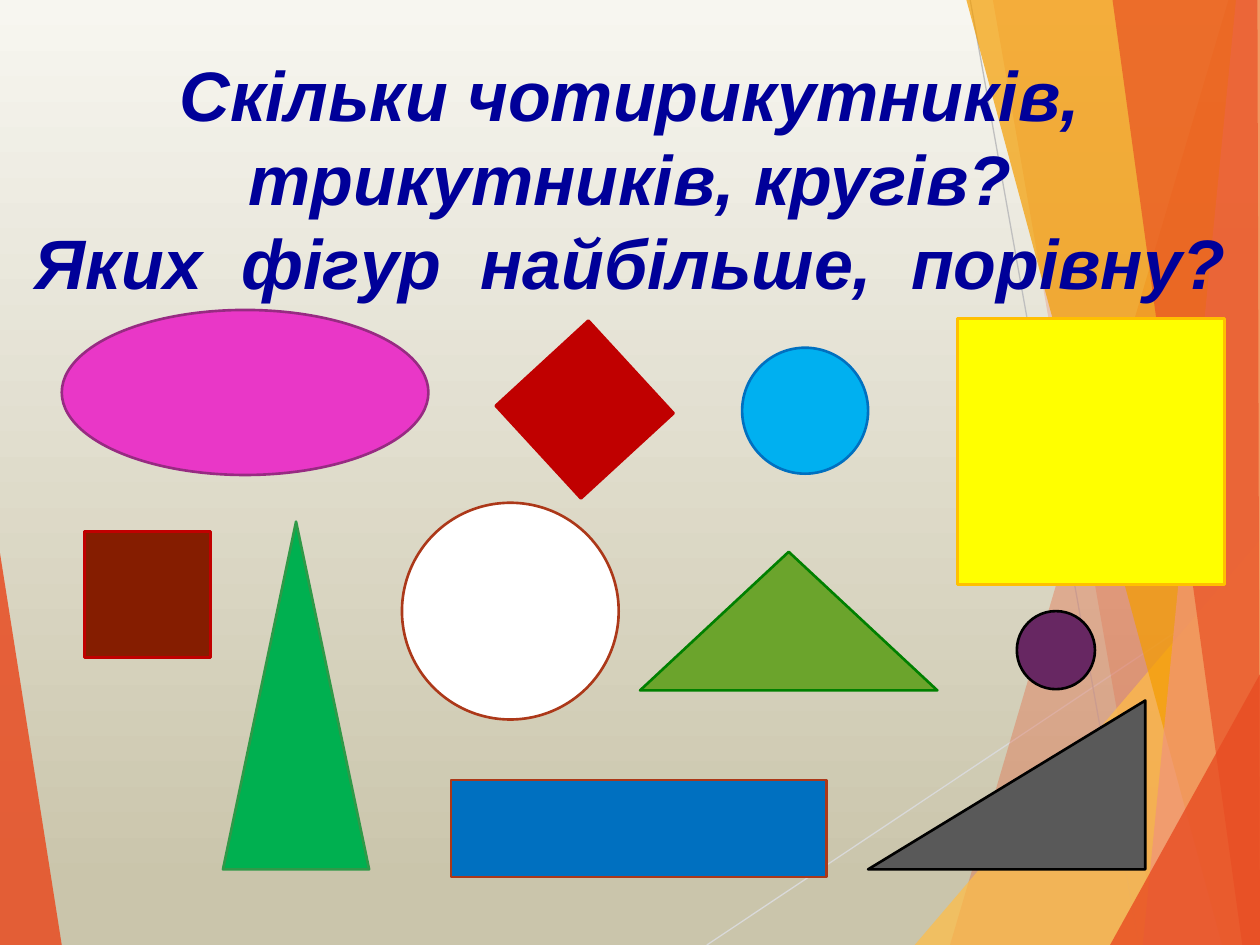
from lxml.etree import SubElement
from pptx import Presentation
from pptx.dml.color import RGBColor
from pptx.enum.shapes import MSO_CONNECTOR, MSO_SHAPE as SHAPE
from pptx.enum.text import MSO_ANCHOR, PP_ALIGN
from pptx.oxml.ns import qn
from pptx.util import Inches, Pt

# Content
W, H = 10, 7.5
QUESTION = ["Скільки чотирикутників, трикутників, кругів?",
            "Яких  фігур  найбільше,  порівну?"]
BACKGROUND = [(0, "F7F6F0"), (0.94, "CAC5AB")]

# Translucent facets: colour, opacity in percent, corners
LEFT_FACET = [("E84C22", 85, [(0, 4.39), (0.49, H), (0, H)])]
RIGHT_FACETS = [
    ("E84C22", 30, [(9.75, 0), (7.54, H), (W, H), (W, 0)]),
    ("E84C22", 20, [(7.88, 0), (9.19, H), (W, H), (W, 0)]),
    ("FFBD47", 72, [(7.26, H), (W, 4.29), (W, H)]),
    ("F49D00", 70, [(7.67, 0), (9.7, H), (W, H), (W, 0)]),
    ("F1947A", 70, [(9.81, 0), (9.07, H), (W, H), (W, 0)]),
    ("E84C22", 65, [(8.83, 0), (9.86, H), (W, H), (9.98, 0)]),
    ("E84C22", 80, [(8.81, H), (W, 5.35), (W, H)]),
]
RAYS = [("D9D9D9", (5.61, H), (W, 4.57)), ("BFBFBF", (7.7, 0), (9.04, H))]

# Figures to count: kind, (left, top, width, height), fill, outline
OVAL, RECT, TRIANGLE = SHAPE.OVAL, SHAPE.RECTANGLE, SHAPE.ISOSCELES_TRIANGLE
FIGURES = [
    (OVAL, (0.49, 2.46, 2.91, 1.31), "E937C7", "972B82"),
    (RECT, (4.14, 2.75, 1, 1), "C00000", "C00000"),
    (OVAL, (5.89, 2.76, 1, 1), "00B0F0", "0070C0"),
    (RECT, (7.6, 2.53, 2.12, 2.11), "FFFF00", "FFC000"),
    (RECT, (0.67, 4.22, 1, 1), "851D00", "C00000"),
    (OVAL, (3.19, 3.99, 1.72, 1.72), "FFFFFF", "AC3819"),
    (TRIANGLE, (5.08, 4.38, 2.36, 1.1), "6BA42C", "008000"),
    (OVAL, (8.07, 4.85, 0.62, 0.62), "672762", "000000"),
    (TRIANGLE, (1.77, 4.14, 1.16, 2.76), "00B050", "2F9948"),
    (RECT, (3.58, 6.19, 2.98, 0.77), "0070C0", "AC3819"),
    (TRIANGLE, (6.89, 5.56, 2.2, 1.34), "595959", "000000"),
]
DIAMOND, RIGHT_TRIANGLE = 1, 10  # figures that are turned or skewed


def rgb(color):
    return RGBColor.from_string(color)


def paint(sp, fill):
    sp.shadow.inherit = False
    sp.fill.solid()
    sp.fill.fore_color.rgb = rgb(fill)


def add_facet(s, color, opacity, corners):
    points = [(round(x * 100), round(y * 100)) for x, y in corners]
    builder = s.shapes.build_freeform(*points[0], scale=Inches(0.01))
    builder.add_line_segments(points[1:], close=True)
    sp = builder.convert_to_shape()
    paint(sp, color)
    sp.line.fill.background()
    clr = sp.fill._xPr.find(qn("a:solidFill"))[0]
    SubElement(clr, qn("a:alpha"), val=str(opacity * 1000))


def add_ray(s, color, start, end):
    ray = s.shapes.add_connector(MSO_CONNECTOR.STRAIGHT,
                                 *map(Inches, start + end))
    ray.line.color.rgb = rgb(color)
    ray.line.width = Pt(0.75)
    SubElement(ray.element.spPr, qn("a:effectLst"))


def add_figure(s, kind, box, fill, outline):
    sp = s.shapes.add_shape(kind, *map(Inches, box))
    paint(sp, fill)
    sp.line.color.rgb = rgb(outline)
    sp.line.width = Pt(1.5)
    return sp


def set_title(title):
    title.left, title.top, title.width, title.height = map(
        Inches, (0, 0.36, W, 2.12))
    tf = title.text_frame
    tf.word_wrap = True
    tf.vertical_anchor = MSO_ANCHOR.TOP
    for i, text in enumerate(QUESTION):
        p = tf.add_paragraph() if i else tf.paragraphs[0]
        p.alignment = PP_ALIGN.CENTER
        r = p.add_run()
        r.text = text
        r.font.name, r.font.size = "Arial", Pt(40)
        r.font.bold = r.font.italic = True
        r.font.color.rgb = rgb("000099")


def main():
    prs = Presentation()
    prs.slide_width, prs.slide_height = Inches(W), Inches(H)
    s = prs.slides.add_slide(prs.slide_layouts[5])

    # Background, fading downwards
    fill = s.background.fill
    fill.gradient()
    fill.gradient_angle = 270
    for stop, (position, color) in zip(fill.gradient_stops, BACKGROUND):
        stop.position = position
        stop.color.rgb = rgb(color)

    # Decoration
    for facet in LEFT_FACET:
        add_facet(s, *facet)
    for ray in RAYS:
        add_ray(s, *ray)
    for facet in RIGHT_FACETS:
        add_facet(s, *facet)

    # Title, raised above the decoration
    title = s.shapes.title
    set_title(title)
    title.element.getparent().append(title.element)

    # Figures
    figures = [add_figure(s, *figure) for figure in FIGURES]
    figures[DIAMOND].rotation = 47.4
    figures[RIGHT_TRIANGLE].adjustments[0] = 1

    prs.save("out.pptx")


if __name__ == "__main__":
    main()
